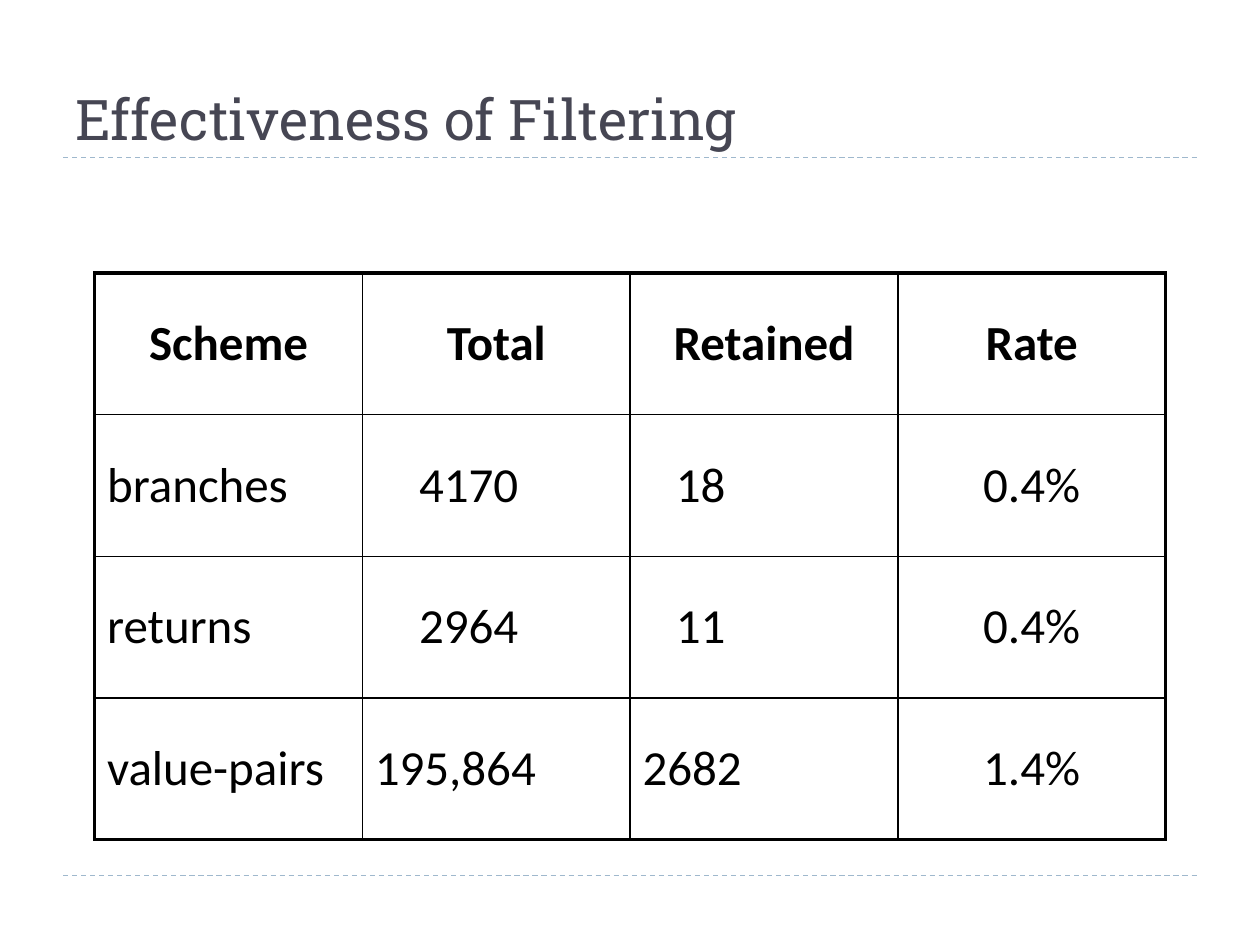
import pptx
import pptx.util
from lxml import etree
from pptx.dml.color import RGBColor
from pptx.enum.dml import MSO_LINE
from pptx.enum.shapes import MSO_CONNECTOR
from pptx.enum.text import MSO_ANCHOR, MSO_AUTO_SIZE, PP_ALIGN
from pptx.oxml.ns import qn
from pptx.util import Cm, Pt


def color(hex_string):
    return RGBColor.from_string(hex_string)


class SlideBuilder:
    """Holds the style and the current slide."""

    heading_font, body_font = "Roboto Slab", "Calibri"
    heading_color, ink, rule_color = "464653", "000000", "9FB8CD"
    outer_border, inner_border = 2.25, 1

    def __init__(self, slide):
        self.slide = slide

    def style(self, paragraph, font, size, hex_string, bold=False):
        for run in paragraph.runs:
            run.font.name = font
            run.font.size = pptx.util.Pt(size)
            run.font.bold = bold
            run.font.color.rgb = color(hex_string)

    def title(self, text, left, top, width, height):
        heading = self.slide.shapes.title
        heading.left, heading.top = Cm(left), Cm(top)
        heading.width, heading.height = Cm(width), Cm(height)
        frame = heading.text_frame
        frame.text = text
        frame.auto_size = MSO_AUTO_SIZE.NONE
        frame.vertical_anchor = MSO_ANCHOR.BOTTOM
        frame.paragraphs[0].alignment = PP_ALIGN.LEFT
        self.style(frame.paragraphs[0], self.heading_font, 32, self.heading_color)

    def rule(self, left, right, y):
        line = self.slide.shapes.add_connector(
            MSO_CONNECTOR.STRAIGHT, Cm(left), Cm(y), Cm(right), Cm(y))
        line.line.color.rgb = color(self.rule_color)
        line.line.width = Pt(0.75)
        line.line.dash_style = MSO_LINE.DASH
        etree.SubElement(line._element.spPr, qn("a:effectLst"))

    def borders(self, cell, widths):
        properties = cell._tc.get_or_add_tcPr()
        for position, (side, width) in enumerate(widths.items()):
            border = etree.Element(qn(f"a:ln{side}"), w=str(Pt(width)))
            fill = etree.SubElement(border, qn("a:solidFill"))
            etree.SubElement(fill, qn("a:srgbClr"), val=self.ink)
            properties.insert(position, border)

    def table(self, rows, indents, left, top, width, height):
        row_count, column_count = len(rows), len(rows[0])
        table = self.slide.shapes.add_table(
            row_count, column_count, Cm(left), Cm(top), Cm(width), Cm(height)).table
        table.first_row = table.horz_banding = False
        for r, row in enumerate(rows):
            for c, text in enumerate(row):
                cell = table.cell(r, c)
                cell.text_frame.text = text
                cell.vertical_anchor = MSO_ANCHOR.MIDDLE
                cell.fill.background()
                cell.margin_left = Cm(0.25 + indents.get((r, c), 0))
                # Headings and the last column are centred
                centred = r == 0 or c == column_count - 1
                paragraph = cell.text_frame.paragraphs[0]
                paragraph.alignment = PP_ALIGN.CENTER if centred else PP_ALIGN.LEFT
                self.style(paragraph, self.body_font, 28, self.ink, bold=r == 0)
                # Heavy frame outside, thin grid inside
                on_edge = {"L": c == 0, "R": c == column_count - 1,
                           "T": r == 0, "B": r == row_count - 1}
                self.borders(cell, {
                    side: self.outer_border if edge else self.inner_border
                    for side, edge in on_edge.items()})


def main():
    presentation = pptx.Presentation()
    presentation.slide_width, presentation.slide_height = Cm(25.4), Cm(19.05)
    title_only = presentation.slide_layouts[5]
    builder = SlideBuilder(presentation.slides.add_slide(title_only))

    # Title between the dashed rules of the page
    for y in (17.65, 3.18):
        builder.rule(1.27, 24.13, y)
    builder.title("Effectiveness of Filtering", 1.27, 0.64, 22.86, 2.54)

    # Filtering results, with the shorter counts indented
    results = [
        ("Scheme", "Total", "Retained", "Rate"),
        ("branches", "4170", "18", "0.4%"),
        ("returns", "2964", "11", "0.4%"),
        ("value-pairs", "195,864", "2682", "1.4%"),
    ]
    count_indents = {(r, c): indent for r in (1, 2)
                     for c, indent in ((1, 0.89), (2, 0.67))}
    builder.table(results, count_indents, 1.91, 5.5, 21.59, 11.43)

    presentation.save("out.pptx")


if __name__ == "__main__":
    main()
